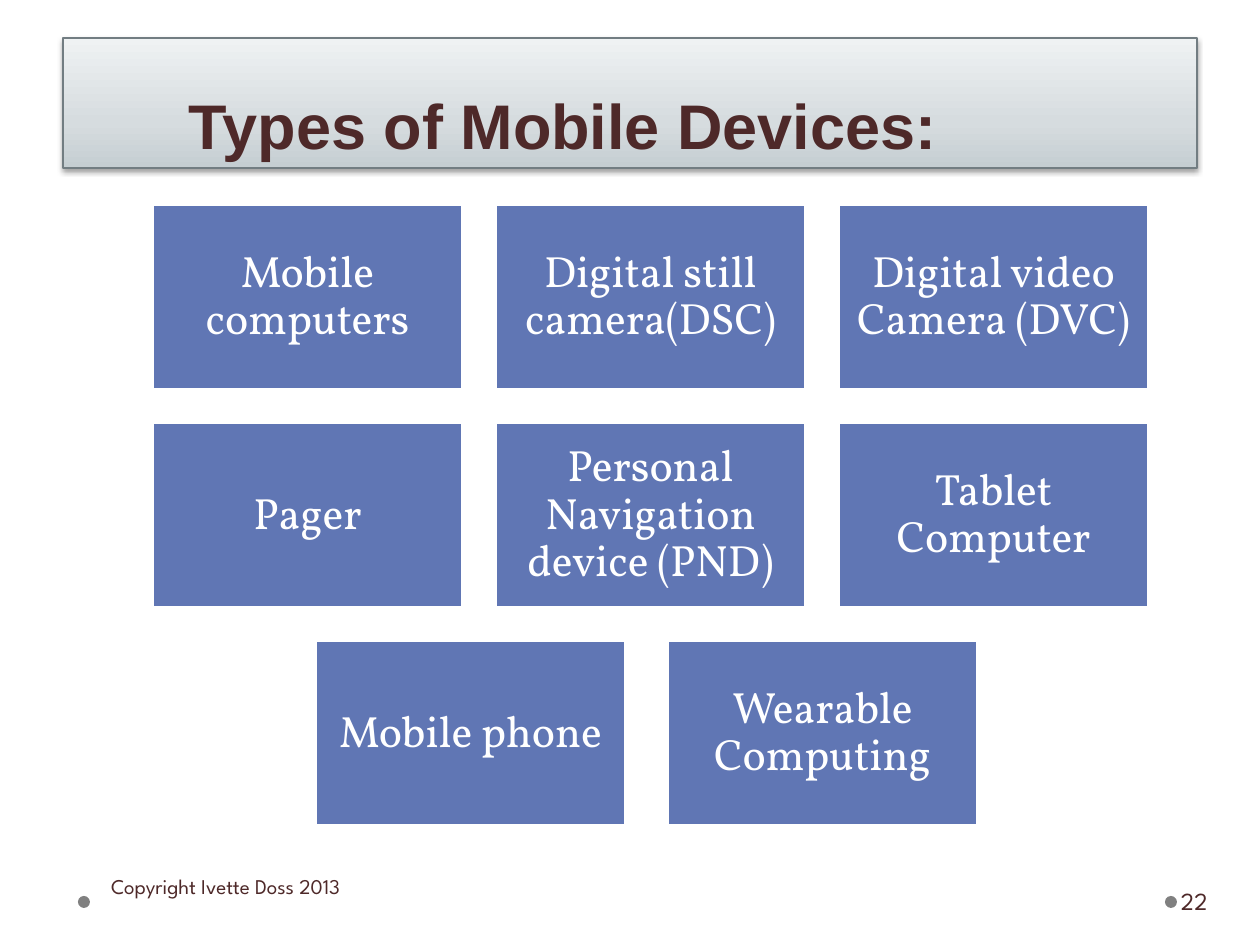
from lxml import etree
from pptx import Presentation
from pptx.dml.color import RGBColor
from pptx.enum.shapes import MSO_SHAPE
from pptx.enum.text import MSO_ANCHOR, PP_ALIGN
from pptx.oxml import parse_xml
from pptx.util import Emu, Pt

RECT, OVAL = MSO_SHAPE.RECTANGLE, MSO_SHAPE.OVAL
MIDDLE, BOTTOM = MSO_ANCHOR.MIDDLE, MSO_ANCHOR.BOTTOM
LEFT, CENTER = PP_ALIGN.LEFT, PP_ALIGN.CENTER
NS = "http://schemas.openxmlformats.org/drawingml/2006/main"

# Content
TITLE = "Types of Mobile Devices:"
FOOTER = "Copyright Ivette Doss 2013"
PAGE = "22"
# Rows of devices: left edge, step between boxes, names
ROWS = [
    (152, 343, ["Mobile computers", "Digital still camera(DSC)", "Digital video Camera (DVC)"]),
    (152, 343, ["Pager", "Personal Navigation device (PND)", "Tablet Computer"]),
    (315, 352, ["Mobile phone", "Wearable Computing"]),
]
GRID_TOP, ROW_STEP, BOX_W, BOX_H = 204, 218, 311, 186
BROWN, BLUE, WHITE, GREY = "4E2929", "6076B4", "FFFFFF", "808080"
GRADIENT = [(0, "C5CED2"), (35, "D6DCDF"), (100, "EFF2F3")]


def px(n):
    return Emu(round(n * 914400 / 126))


def color(value):
    return RGBColor.from_string(value)


def add_shape(kind, x, y, w, h, fill=None, line=None, width=1):
    s = slide.shapes.add_shape(kind, px(x), px(y), px(w), px(h))
    s.shadow.inherit = False
    if fill:
        s.fill.solid()
        s.fill.fore_color.rgb = color(fill)
    if line:
        s.line.color.rgb = color(line)
        s.line.width = Pt(width)
    else:
        s.line.fill.background()
    return s


def write(s, text, font, size, ink, align=LEFT, anchor=MIDDLE, insets=(6, 6, 6, 6), spacing=None, bold=False):
    tf = s.text_frame
    tf.word_wrap = True
    tf.vertical_anchor = anchor
    tf.margin_left, tf.margin_top, tf.margin_right, tf.margin_bottom = map(px, insets)
    p = tf.paragraphs[0]
    p.text = text
    p.alignment = align
    p.line_spacing = spacing
    p.font.name = font
    p.font.size = Pt(size)
    p.font.bold = bold
    p.font.color.rgb = color(ink)


def add_gradient(s, stops):
    s.fill.gradient()
    grad = s._element.spPr.find(f"{{{NS}}}gradFill")
    gs = "".join(f'<a:gs pos="{pos * 1000}"><a:srgbClr val="{c}"/></a:gs>' for pos, c in stops)
    grad.getparent().replace(grad, parse_xml(
        f'<a:gradFill xmlns:a="{NS}" rotWithShape="1"><a:gsLst>{gs}</a:gsLst>'
        '<a:lin ang="16200000" scaled="0"/></a:gradFill>'))


def add_shadow(s):
    effects = s._element.spPr.find(f"{{{NS}}}effectLst")
    shadow = etree.SubElement(effects, f"{{{NS}}}outerShdw", blurRad=str(Pt(3.1)),
                              dist=str(Pt(1.6)), dir="5400000", rotWithShape="0")
    ink = etree.SubElement(shadow, f"{{{NS}}}srgbClr", val="000000")
    etree.SubElement(ink, f"{{{NS}}}alpha", val="38000")


prs = Presentation()
prs.slide_width, prs.slide_height = px(1260), px(945)
slide = prs.slides.add_slide(prs.slide_layouts[6])

# Footer dots
for x in (1165, 78):
    add_shape(OVAL, x, 896, 12, 12, GREY)

# Device boxes
for row, (left, step, names) in enumerate(ROWS):
    for col, name in enumerate(names):
        s = add_shape(RECT, left + col * step, GRID_TOP + row * ROW_STEP, BOX_W, BOX_H, BLUE, WHITE, 2.25)
        write(s, name, "Vollkorn", 25, WHITE, CENTER, insets=(12, 12, 12, 12), spacing=0.9)

# Footer and page number
for text, size, box, insets in [
    (FOOTER, 12, (105, 861, 399, 50), (6, 6, 12, 6)),
    (PAGE, 14, (1177, 876, 77, 50), (4, 6, 6, 6)),
]:
    s = slide.shapes.add_textbox(*map(px, box))
    write(s, text, "League Spartan", size, BROWN, insets=insets)

# Title bar
s = add_shape(RECT, 63, 38, 1134, 130, line="727D82", width=0.75)
add_gradient(s, GRADIENT)
add_shadow(s)
write(s, TITLE, "Arial", 36, BROWN, anchor=BOTTOM, insets=(126, 6, 12, 6), spacing=Pt(58), bold=True)

prs.save("out.pptx")
